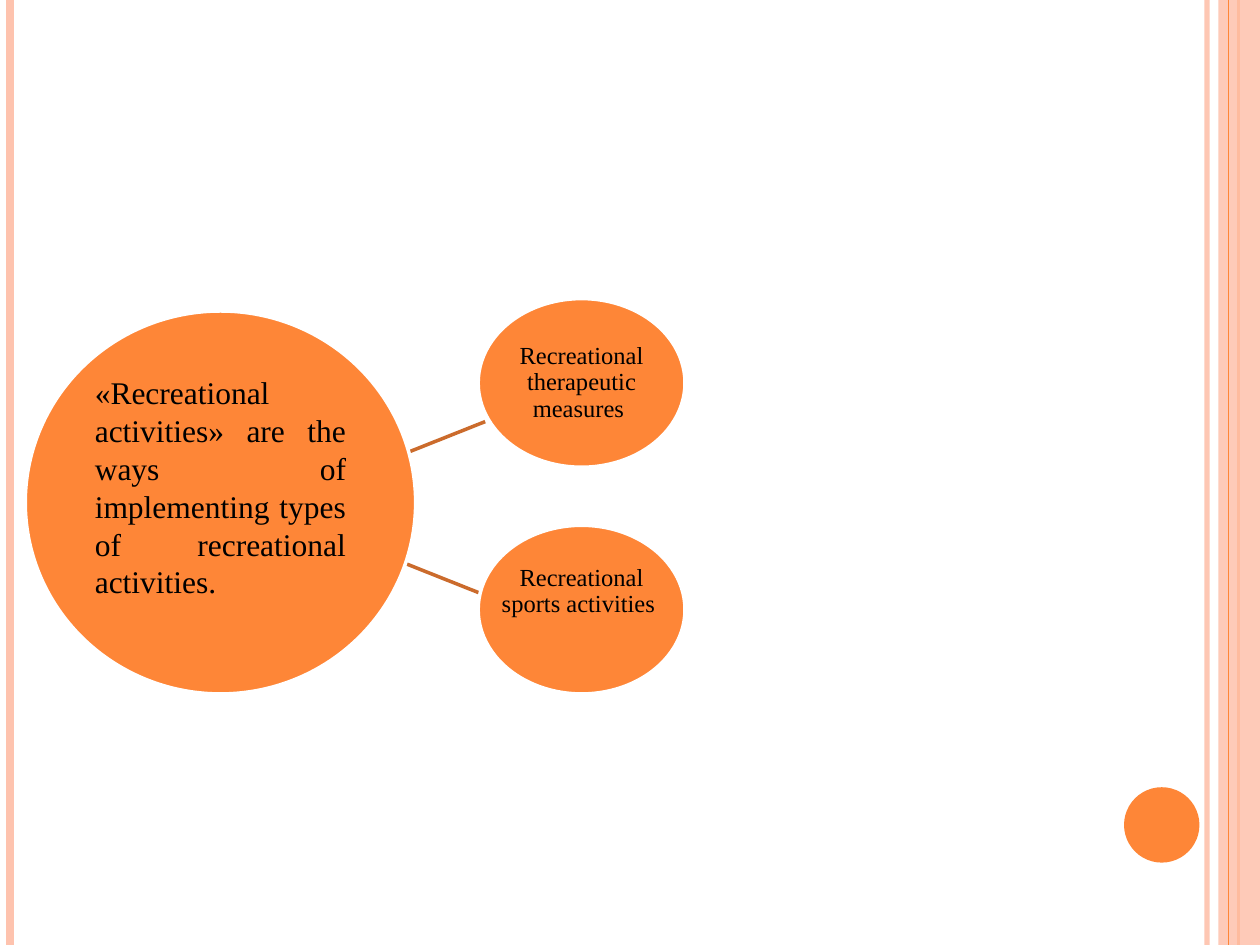
from lxml import etree
from pptx import Presentation
from pptx.dml.color import RGBColor
from pptx.enum.shapes import MSO_CONNECTOR, MSO_SHAPE
from pptx.enum.text import MSO_ANCHOR, PP_ALIGN
from pptx.oxml.ns import qn
from pptx.util import Cm, Pt

STRAIGHT = MSO_CONNECTOR.STRAIGHT
OVAL, RECTANGLE = MSO_SHAPE.OVAL, MSO_SHAPE.RECTANGLE
TOP, MIDDLE = MSO_ANCHOR.TOP, MSO_ANCHOR.MIDDLE
CENTER, JUSTIFY = PP_ALIGN.CENTER, PP_ALIGN.JUSTIFY

COLORS = {
    "orange": "FE8637",
    "peach": "FEC3AE",
    "spoke": "CB6B2C",
    "white": "FFFFFF",
    "text": "000000",
}
FONT = "Times New Roman"
WIDTH, HEIGHT = 25.4, 19.05


def color(name):
    return RGBColor.from_string(COLORS[name])


def set_alpha(color_format_parent, percent):
    for node in color_format_parent.iter(qn("a:srgbClr")):
        etree.SubElement(node, qn("a:alpha")).set("val", str(percent * 1000))


def add_line(slide, start, end, line_color, width):
    connector = slide.shapes.add_connector(STRAIGHT, *map(Cm, (*start, *end)))
    connector.line.color.rgb = color(line_color)
    connector.line.width = Pt(width)
    etree.SubElement(connector._element.spPr, qn("a:effectLst"))
    return connector


def add_filled(slide, kind, box, fill, outline=None):
    shape = slide.shapes.add_shape(kind, *map(Cm, box))
    shape.shadow.inherit = False
    shape.fill.solid()
    shape.fill.fore_color.rgb = color(fill)
    if outline:
        shape.line.color.rgb = color(outline)
        shape.line.width = Pt(2)
    else:
        shape.line.fill.background()
    return shape


def add_circle(slide, box, text, size, alignment, anchor, spacing, margins):
    shape = add_filled(slide, OVAL, box, "orange", "white")
    frame = shape.text_frame
    frame.word_wrap = True
    frame.vertical_anchor = anchor
    frame.margin_left = frame.margin_right = Cm(margins[0])
    frame.margin_top, frame.margin_bottom = Cm(margins[1]), Cm(margins[2])
    paragraph = frame.paragraphs[0]
    paragraph.alignment = alignment
    paragraph.line_spacing = spacing
    run = paragraph.add_run()
    run.text = text
    run.font.name = FONT
    run.font.size = Pt(size)
    run.font.color.rgb = color("text")


def add_frame(slide, left, top, width, height):
    right, bottom = left + width, top + height

    def add_vertical(x, line_color, line_width):
        return add_line(slide, (x, top), (x, bottom), line_color, line_width)

    inner = add_vertical(right - 1.07, "peach", 3)
    set_alpha(inner._element.spPr, 93)
    add_vertical(left + 0.2, "peach", 4.5)
    add_vertical(right - 0.43, "orange", 1.5)
    band = add_filled(slide, RECTANGLE, (right - 0.84, top, 0.84, height), "peach")
    set_alpha(band._element.spPr, 87)
    add_vertical(right - 0.64, "orange", 0.75)
    add_filled(slide, OVAL, (right - 2.74, bottom - 3.18, 1.52, 1.52), "orange")


def add_diagram(slide, left, top, width, height):
    branch_width, branch_height = 4.17, 3.4
    branch_left = left + width - branch_width
    hub_width, hub_height = 7.87, 7.72
    hub_top = top + height - hub_height
    hub_middle = hub_top + hub_height / 2
    branches = [
        ("Recreational therapeutic measures ", top, -1, 0),
        ("Recreational sports activities ", top + height - branch_height, 1, 0.72),
    ]

    for _, _, direction, _ in branches:
        middle = hub_middle + 0.12
        add_line(slide, (left + 6.73, middle + direction * 0.74),
                 (left + 9.27, middle + direction * 1.75), "spoke", 2)

    add_circle(slide, (left, hub_top, hub_width, hub_height),
               "«Recreational activities» are the ways of implementing types "
               "of recreational activities.",
               18, JUSTIFY, TOP, 1, (0.25, 0.13, 0.13))

    for text, branch_top, _, bottom_margin in branches:
        add_circle(slide, (branch_left, branch_top, branch_width, branch_height),
                   text, 14, CENTER, MIDDLE, 0.9, (-0.18, 0, bottom_margin))


def main():
    presentation = Presentation()
    presentation.slide_width = Cm(WIDTH)
    presentation.slide_height = Cm(HEIGHT)
    slide = presentation.slides.add_slide(presentation.slide_layouts[6])
    add_frame(slide, 0, 0, WIDTH, HEIGHT)
    add_diagram(slide, 0.51, 6.02, 13.3, 7.97)
    presentation.save("out.pptx")


if __name__ == "__main__":
    main()
